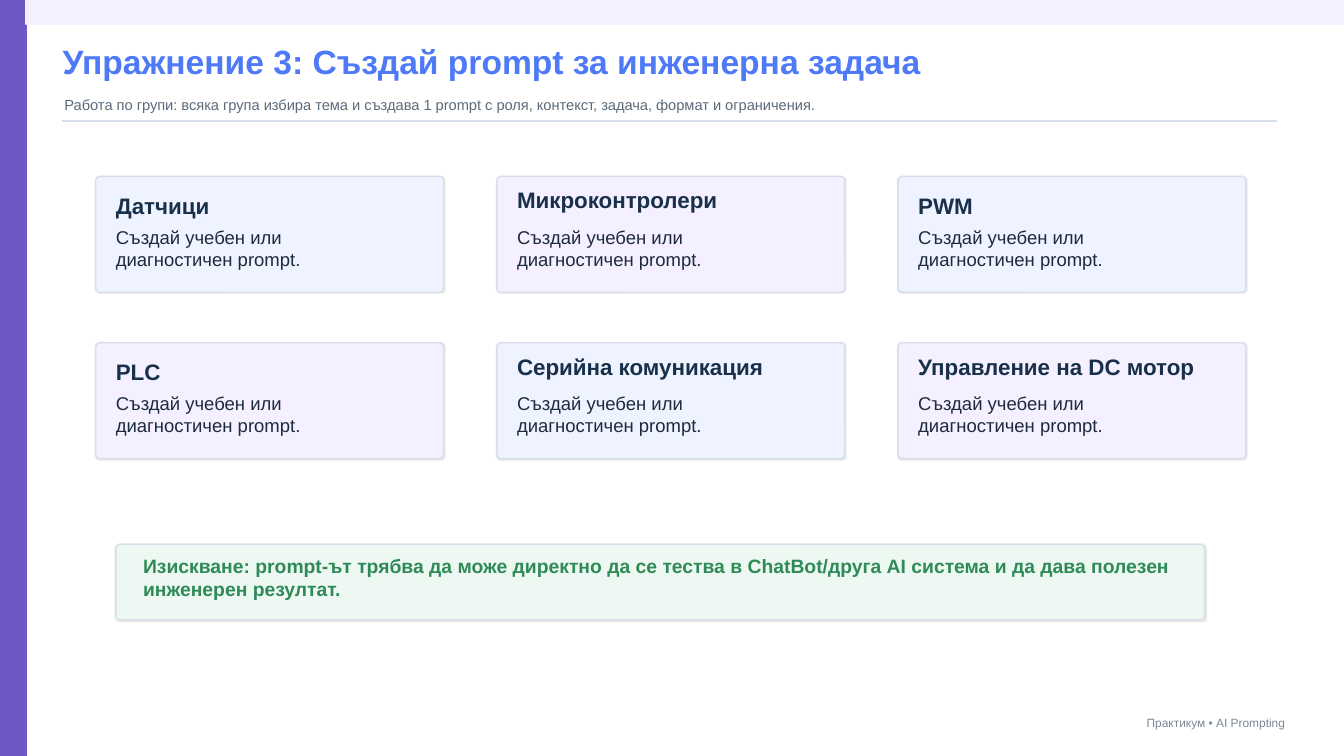
"""Build the slide of six engineering topics for the prompt exercise."""
from lxml.etree import SubElement
from pptx import Presentation
from pptx.dml.color import RGBColor
from pptx.enum.shapes import MSO_CONNECTOR, MSO_SHAPE
from pptx.enum.text import MSO_ANCHOR, MSO_AUTO_SIZE, PP_ALIGN
from pptx.oxml.ns import qn
from pptx.util import Pt

TITLE = "Упражнение 3: Създай prompt за инженерна задача"
INTRO = ("Работа по групи: всяка група избира тема и създава 1 prompt "
         "с роля, контекст, задача, формат и ограничения.")
TASK = "Създай учебен или диагностичен prompt."
RULE = ("Изискване: prompt-ът трябва да може директно да се тества в "
        "ChatBot/друга AI система и да дава полезен инженерeн резултат.")
FOOTER = "Практикум • AI Prompting"
SHORT, LONG = (14.4, 13), (6, 21.6)
TOPICS = [
    ("Датчици", 129.6, SHORT),
    ("Микроконтролери", 150.5, LONG),
    ("PWM", 129.6, SHORT),
    ("PLC", 129.6, SHORT),
    ("Серийна комуникация", 191.5, LONG),
    ("Управление на DC мотор", 204.5, LONG),
]
COLS = 3
LEFT, TOP = 68.4, 126
STEP_X, STEP_Y = 286.56, 118.8
CARD_W, CARD_H = 248.4, 82.8
PAD = 14.4
BLUE, LILAC, GREEN, EDGE = "EEF3FF", "F4F0FF", "EEF8F3", "D9DFEA"
VIOLET = "6E58C6"


def color(code):
    return RGBColor.from_string(code)


def place(item, box):
    item.left, item.top, item.width, item.height = map(Pt, box)


def write(item, text, size, ink, bold=False, align=PP_ALIGN.LEFT):
    frame = item.text_frame
    frame.text = text
    frame.word_wrap = True
    frame.auto_size = MSO_AUTO_SIZE.NONE
    frame.vertical_anchor = MSO_ANCHOR.MIDDLE
    frame.margin_left = frame.margin_right = 0
    frame.margin_top = frame.margin_bottom = 0
    para = frame.paragraphs[0]
    para.alignment = align
    font = para.font
    font.name, font.size, font.bold = "Arial", Pt(size), bold
    font.color.rgb = color(ink)


def label(box, *style, **more):
    write(slide.shapes.add_textbox(*map(Pt, box)), *style, **more)


def block(kind, box, fill, edge):
    item = slide.shapes.add_shape(kind, *map(Pt, box))
    item.shadow.inherit = False
    item.fill.solid()
    item.fill.fore_color.rgb = color(fill)
    item.line.color.rgb = color(edge)
    item.line.width = Pt(1)
    return item


def panel(box, fill, curve):
    item = block(MSO_SHAPE.ROUNDED_RECTANGLE, box, fill, EDGE)
    item.adjustments[0] = curve
    effects = item._element.spPr.find(qn("a:effectLst"))
    shade = SubElement(effects, qn("a:outerShdw"), blurRad=str(Pt(0.5)),
                       dist=str(Pt(0.2)), dir="2700000", algn="bl",
                       rotWithShape="0")
    tint = SubElement(shade, qn("a:srgbClr"), val="000000")
    SubElement(tint, qn("a:alpha"), val="10000")


deck = Presentation()
deck.slide_width, deck.slide_height = Pt(960), Pt(540)
slide = deck.slides.add_slide(deck.slide_layouts[5])

block(MSO_SHAPE.RECTANGLE, (0, 0, 18.72, 540), VIOLET, VIOLET)
block(MSO_SHAPE.RECTANGLE, (18.72, 0, 941.28, 17.28), LILAC, LILAC)
title = slide.shapes.title
place(title, (44.64, 27.36, 669.6, 33.12))
write(title, TITLE, 24, "4E79F7", bold=True)
label((46.08, 66.96, 792, 15.84), INTRO, 10.5, "5C6B7A")

rule = slide.shapes.add_connector(
    MSO_CONNECTOR.STRAIGHT, *map(Pt, (44.64, 86.4, 912.24, 86.4)))
rule.line.color.rgb = color(EDGE)
rule.line.width = Pt(1.2)
SubElement(rule._element.spPr, qn("a:effectLst"))
label((738, 509.76, 180, 12.96), FOOTER, 8.5, "7A8796",
      align=PP_ALIGN.RIGHT)

for i, (topic, width, (drop, height)) in enumerate(TOPICS):
    row, col = divmod(i, COLS)
    x, y = LEFT + col * STEP_X, TOP + row * STEP_Y
    panel((x, y, CARD_W, CARD_H), (BLUE, LILAC)[i % 2], 0.035)
    label((x + PAD, y + drop, width, height), topic, 16, "18304A", bold=True)
    label((x + PAD, y + 40.32, 201.6, 21.6), TASK, 13.2, "1E2B3C")

panel((82.8, 388.8, 777.6, 54), GREEN, 0.053)
label((102.24, 405.36, 734.4, 14.4), RULE, 13.8, "2E8B57", bold=True)

deck.save("out.pptx")
